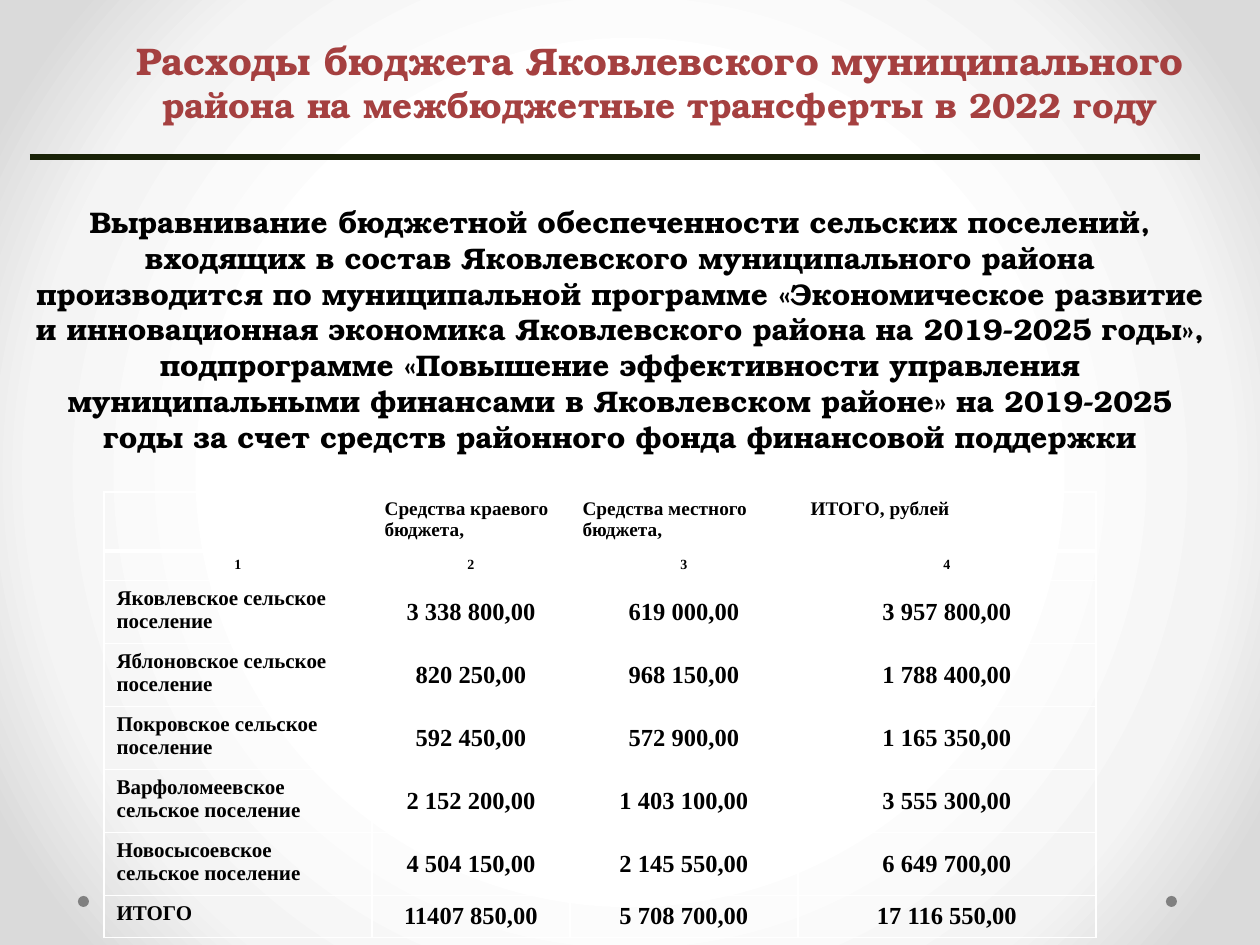
from dataclasses import dataclass

from pptx import Presentation
from pptx.dml.color import RGBColor
from pptx.enum.shapes import MSO_CONNECTOR, MSO_SHAPE
from pptx.enum.text import MSO_ANCHOR as Anchor, PP_ALIGN as Align
from pptx.oxml import parse_xml
from pptx.oxml.ns import nsdecls, qn
from pptx.util import Emu, Pt

# Content
TITLE = (
    ("Расходы бюджета Яковлевского муниципального ", 22),
    ("района на межбюджетные трансферты в 2022 году", 20),
)
INTRO = (
    "Выравнивание бюджетной обеспеченности сельских поселений, входящих в состав "
    "Яковлевского муниципального района производится по муниципальной программе "
    "«Экономическое развитие и инновационная экономика Яковлевского района на "
    "2019-2025 годы», подпрограмме «Повышение эффективности управления "
    "муниципальными финансами в Яковлевском районе» на 2019-2025 годы за счет "
    "средств районного фонда финансовой поддержки"
)
TRANSFERS = [
    ("", "Средства краевого бюджета,", "Средства местного бюджета,", "ИТОГО, рублей"),
    ("1", "2", "3", "4"),
    ("Яковлевское сельское поселение", "3 338 800,00", "619 000,00", "3 957 800,00"),
    ("Яблоновское сельское поселение", "820 250,00", "968 150,00", "1 788 400,00"),
    ("Покровское сельское поселение", "592 450,00", "572 900,00", "1 165 350,00"),
    ("Варфоломеевское сельское поселение", "2 152 200,00", "1 403 100,00", "3 555 300,00"),
    ("Новосысоевское сельское поселение", "4 504 150,00", "2 145 550,00", "6 649 700,00"),
    ("ИТОГО", "11407 850,00", "5 708 700,00", "17 116 550,00"),
]


@dataclass(frozen=True)
class Theme:
    title: str = "A54040"
    text: str = "000000"
    rule: str = "192208"
    dot: str = "808080"
    border: str = "FFFFFF"
    background: tuple = ((50, "FFFFFF"), (76, "F4F4F4"), (92, "DADADA"))
    display_font: str = "TeX Gyre Bonum"
    table_font: str = "Times New Roman"
    intro_size: int = 17
    header_size: int = 11
    index_size: int = 8
    name_size: int = 12
    value_size: int = 14


THEME = Theme()

# Layout in px
SCALE = 914400 / 126
SLIDE_SIZE = (1260, 945)
TITLE_BOX = (60, 49, 1200, 64)
INTRO_BOX = (20, 186, 1200, 286)
RULE_LEFT, RULE_RIGHT, RULE_Y = 30, 1200, 157
DOT_LEFTS, DOT_TOP, DOT_SIZE = (1166, 78), 896, 11
TABLE_LEFT, TABLE_TOP = 104, 492
COLUMN_WIDTHS = (268, 198, 228, 298)
ROW_HEIGHTS = (57, 28, 59, 59, 59, 59, 60, 39)


def px(value):
    return Emu(round(value * SCALE))


def apply(target, values):
    for name, value in values.items():
        setattr(target, name, value)


def add_run(paragraph, text, size, font, color):
    run = paragraph.add_run()
    run.text = text
    apply(run.font, {"size": Pt(size), "name": font, "bold": True})
    run.font.color.rgb = RGBColor.from_string(color)


def add_text(slide, box, runs, color):
    frame = slide.shapes.add_textbox(*map(px, box)).text_frame
    apply(frame, {"word_wrap": True, "vertical_anchor": Anchor.MIDDLE})
    paragraph = frame.paragraphs[0]
    paragraph.alignment = Align.CENTER
    for text, size in runs:
        add_run(paragraph, text, size, THEME.display_font, color)


def set_background(slide):
    slide.background.fill.solid()
    properties = slide.element.find(".//" + qn("p:bgPr"))
    stops = "".join(
        f'<a:gs pos="{position * 1000}"><a:srgbClr val="{color}"/></a:gs>'
        for position, color in THEME.background
    )
    gradient = parse_xml(
        f'<a:gradFill {nsdecls("a")} rotWithShape="1"><a:gsLst>{stops}</a:gsLst>'
        '<a:path path="circle"><a:fillToRect l="50000" t="50000" r="50000" b="50000"/>'
        "</a:path></a:gradFill>"
    )
    properties.replace(properties[0], gradient)


def add_dot(slide, left):
    dot = slide.shapes.add_shape(
        MSO_SHAPE.OVAL, px(left), px(DOT_TOP), px(DOT_SIZE), px(DOT_SIZE))
    dot.shadow.inherit = False
    dot.fill.solid()
    dot.fill.fore_color.rgb = RGBColor.from_string(THEME.dot)
    dot.line.fill.background()


def add_rule(slide):
    rule = slide.shapes.add_connector(
        MSO_CONNECTOR.STRAIGHT, px(RULE_LEFT), px(RULE_Y), px(RULE_RIGHT), px(RULE_Y))
    rule.line.width = Pt(3.75)
    rule.line.color.rgb = RGBColor.from_string(THEME.rule)
    rule.element.spPr.append(parse_xml(f'<a:effectLst {nsdecls("a")}/>'))


def set_borders(cell, widths):
    properties = cell._tc.get_or_add_tcPr()
    for index, (side, width) in enumerate(widths.items()):
        properties.insert(index, parse_xml(
            f'<a:ln{side} {nsdecls("a")} w="{Pt(width)}"><a:solidFill>'
            f'<a:srgbClr val="{THEME.border}"/></a:solidFill></a:ln{side}>'))


def cell_style(row, column):
    """Return size, alignment and anchor for a table position."""
    if row == 0:
        return THEME.header_size, Align.LEFT, Anchor.TOP
    if row == 1:
        return THEME.index_size, Align.CENTER, Anchor.TOP
    if column == 0:
        return THEME.name_size, Align.LEFT, Anchor.TOP
    return THEME.value_size, Align.CENTER, Anchor.MIDDLE


def add_transfer_table(slide):
    table = slide.shapes.add_table(
        len(ROW_HEIGHTS), len(COLUMN_WIDTHS), px(TABLE_LEFT), px(TABLE_TOP),
        px(sum(COLUMN_WIDTHS)), px(sum(ROW_HEIGHTS))).table
    apply(table, {"first_row": False, "horz_banding": False})
    for column, width in zip(table.columns, COLUMN_WIDTHS):
        column.width = px(width)
    for row, height in zip(table.rows, ROW_HEIGHTS):
        row.height = px(height)
    for row, texts in enumerate(TRANSFERS):
        borders = {"L": 1, "R": 1, "T": 3 if row == 1 else 1, "B": 3 if row == 0 else 1}
        for column, text in enumerate(texts):
            cell = table.cell(row, column)
            size, alignment, anchor = cell_style(row, column)
            cell.vertical_anchor = anchor
            cell.fill.background()
            set_borders(cell, borders)
            paragraph = cell.text_frame.paragraphs[0]
            paragraph.alignment = alignment
            if text:
                add_run(paragraph, text, size, THEME.table_font, THEME.text)


def main():
    presentation = Presentation()
    width, height = map(px, SLIDE_SIZE)
    apply(presentation, {"slide_width": width, "slide_height": height})
    slide = presentation.slides.add_slide(presentation.slide_layouts[6])

    # Backdrop
    set_background(slide)
    for left in DOT_LEFTS:
        add_dot(slide, left)

    # Heading, rule and introduction
    add_text(slide, TITLE_BOX, TITLE, THEME.title)
    add_rule(slide)
    add_text(slide, INTRO_BOX, [(INTRO, THEME.intro_size)], THEME.text)

    # Transfers by settlement
    add_transfer_table(slide)
    presentation.save("out.pptx")


if __name__ == "__main__":
    main()
